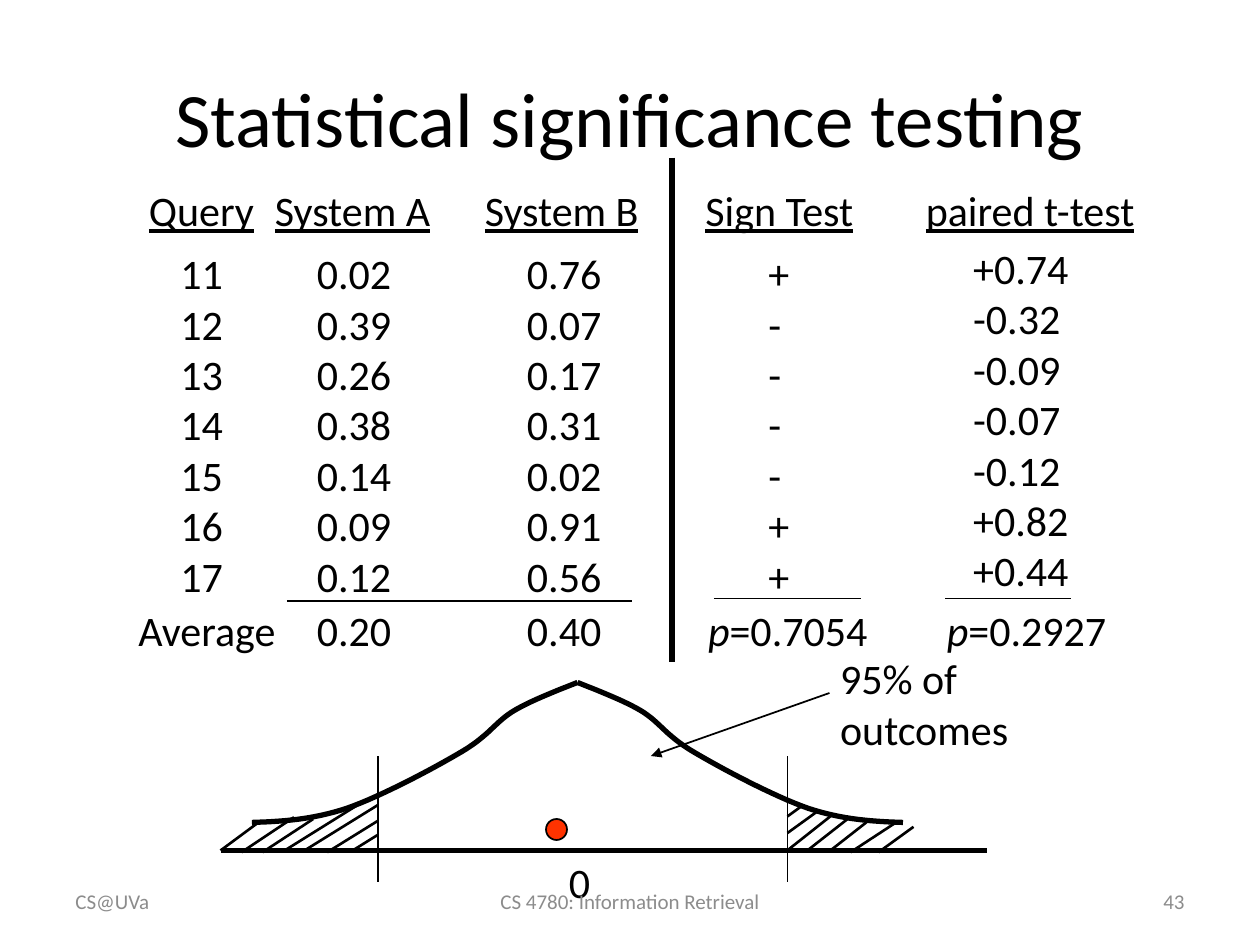
from pptx import Presentation
from pptx.dml.color import RGBColor
from pptx.enum.shapes import MSO_CONNECTOR, MSO_SHAPE
from pptx.enum.text import MSO_ANCHOR, PP_ALIGN
from pptx.oxml.ns import qn
from pptx.util import Pt
from lxml.etree import SubElement

INK = {"black": "000000", "grey": "8C8C8C", "red": "FF3300"}
FONT = "Calibri"

COLS = [
    ("Query", 6, 75, 24, 39, ["11", "12", "13", "14", "15", "16", "17"],
     "Average", 0, 94),
    ("System A", 78, 104, 102, 57,
     ["0.02", "0.39", "0.26", "0.38", "0.14", "0.09", "0.12"],
     "0.20", 102, 57),
    ("System B", 198, 103, 222, 57,
     ["0.76", "0.07", "0.17", "0.31", "0.02", "0.91", "0.56"],
     "0.40", 222, 57),
    ("Sign Test", 324, 100, 360, 27, ["+", "-", "-", "-", "-", "+", "+"],
     "p=0.7054", 325.5, 106),
    ("paired t-test", 450, 139, 477, 69,
     ["+0.74", "-0.32", "-0.09", "-0.07", "-0.12", "+0.82", "+0.44"],
     "p=0.2927", 462, 106),
]
RULES = [(92, 241.5, 289, 241.5, 1), (468, 240, 540, 240, 1),
         (336, 240, 420, 240, 1), (312, -12, 312, 276, 3)]

BELL = [(18, 80), (35, 79.5), (52, 78.5), (72, 72), (92, 65), (122, 49),
        (138, 39.5), (154, 30), (157, 22.5), (168, 16), (179, 9.5),
        (198, 2.5), (204, 0)]
LEFT = [(90, 79, 61, 97), (90, 70, 48, 96), (80, 69, 37.5, 95.5),
        (90, 87, 75.5, 96), (53, 78, 24, 97), (42, 77, 12, 97),
        (23, 79, 0, 96)]
RIGHT = [(396, 82.5, 376, 97), (342, 73, 324, 86), (386, 80, 360, 97),
         (333, 70, 324, 76.5), (369, 80, 348.5, 96), (359, 77.5, 336, 95.5),
         (348.5, 76.5, 324.5, 95.5)]


def rgb(name):
    return RGBColor.from_string(INK[name])


def style(run, size, ink="black", under=False, slant=False):
    font = run.font
    font.name, font.size = FONT, Pt(size)
    font.color.rgb = rgb(ink)
    if under:
        font.underline = True
    if slant:
        font.italic = True


def label(slide, x, y, w, h, rows, size=24, ink="black", under=False,
          wrap=False, align=PP_ALIGN.LEFT, anchor=MSO_ANCHOR.TOP):
    frame = slide.shapes.add_textbox(Pt(x), Pt(y), Pt(w), Pt(h)).text_frame
    frame.word_wrap = wrap
    frame.vertical_anchor = anchor
    for i, row in enumerate(rows):
        para = frame.add_paragraph() if i else frame.paragraphs[0]
        para.alignment = align
        parts = [("p", True), (row[1:], False)] if row[:2] == "p=" else [(row, False)]
        for text, slant in parts:
            run = para.add_run()
            run.text = text
            style(run, size, ink, under, slant)


def rule(slide, x1, y1, x2, y2, width, arrow=False):
    line = slide.shapes.add_connector(
        MSO_CONNECTOR.STRAIGHT, Pt(x1), Pt(y1), Pt(x2), Pt(y2))
    line.line.width = Pt(width)
    line.line.color.rgb = rgb("black")
    props = line._element.spPr
    if arrow:
        SubElement(props.find(qn("a:ln")), qn("a:tailEnd"), type="triangle")
    SubElement(props, qn("a:effectLst"))


def rules(slide, x, y, rows):
    for x1, y1, x2, y2, width in rows:
        rule(slide, x + x1, y + y1, x + x2, y + y2, width)


def title(slide, x, y, w, h):
    shape = slide.shapes.title
    shape.left, shape.top, shape.width, shape.height = Pt(x), Pt(y), Pt(w), Pt(h)
    frame = shape.text_frame
    frame.vertical_anchor = MSO_ANCHOR.MIDDLE
    para = frame.paragraphs[0]
    para.alignment = PP_ALIGN.CENTER
    run = para.add_run()
    run.text = "Statistical significance testing"
    style(run, 44)


def scores(slide, x, y):
    for head, hx, hw, vx, vw, vals, foot, fx, fw in COLS:
        lift = 3 if head == "paired t-test" else 0
        label(slide, x + hx, y, hw, 36, [head], under=True)
        label(slide, x + vx, y + 36 - lift, vw, 211, vals)
        label(slide, x + fx, y + 240, fw, 36, [foot])
    rules(slide, x, y, RULES)


def bezier(nodes, steps=16):
    for i in range(0, len(nodes) - 1, 3):
        a, b, c, d = nodes[i:i + 4]
        for k in range(1, steps + 1):
            t = k / steps
            s = 1 - t
            yield tuple(s**3 * p + 3 * s * s * t * q + 3 * s * t * t * r + t**3 * v
                        for p, q, r, v in zip(a, b, c, d))


def curve(slide, x, y, nodes):
    def place(dot):
        return Pt(x + dot[0]), Pt(y + dot[1])

    build = slide.shapes.build_freeform(*place(nodes[0]))
    build.add_line_segments([place(dot) for dot in bezier(nodes)], close=False)
    shape = build.convert_to_shape()
    shape.shadow.inherit = False
    shape.fill.background()
    shape.line.width = Pt(3)
    shape.line.color.rgb = rgb("black")


def bell(slide, x, y):
    dot = slide.shapes.add_shape(
        MSO_SHAPE.OVAL, Pt(x + 186), Pt(y + 78), Pt(12), Pt(12))
    dot.shadow.inherit = False
    dot.fill.solid()
    dot.fill.fore_color.rgb = rgb("red")
    dot.line.width = Pt(1)
    dot.line.color.rgb = rgb("black")
    rules(slide, x, y, [(0, 96, 438, 96, 3)])
    peak = BELL[-1][0]
    curve(slide, x, y, BELL)
    curve(slide, x, y, [(2 * peak - px, py) for px, py in BELL])
    label(slide, x + 192, y + 96, 27, 36, ["0"])
    rules(slide, x, y, [(cut, 42, cut, 114, 1) for cut in (90, 324)])
    rule(slide, x + 348, y + 6, x + 246, y + 42, 1, arrow=True)
    label(slide, x + 347, y - 20.5, 150, 66, ["95% of outcomes"], wrap=True)
    rules(slide, x, y, [(*ends, 1.5) for ends in LEFT + RIGHT])


def footer(slide, x, y, h):
    for dx, w, text, align in [
            (210, 228, "CS 4780: Information Retrieval", PP_ALIGN.CENTER),
            (0, 168, "CS@UVa", PP_ALIGN.LEFT),
            (480, 168, "43", PP_ALIGN.RIGHT)]:
        label(slide, x + dx, y, w, h, [text], 12, "grey", wrap=True,
              align=align, anchor=MSO_ANCHOR.MIDDLE)


def main():
    deck = Presentation()
    deck.slide_width, deck.slide_height = Pt(720), Pt(540)
    slide = deck.slides.add_slide(deck.slide_layouts[5])
    title(slide, 36, 21.6, 648, 90)
    scores(slide, 72, 102)
    bell(slide, 126, 390)
    footer(slide, 36, 500.5, 28.75)
    deck.save("out.pptx")


if __name__ == "__main__":
    main()
